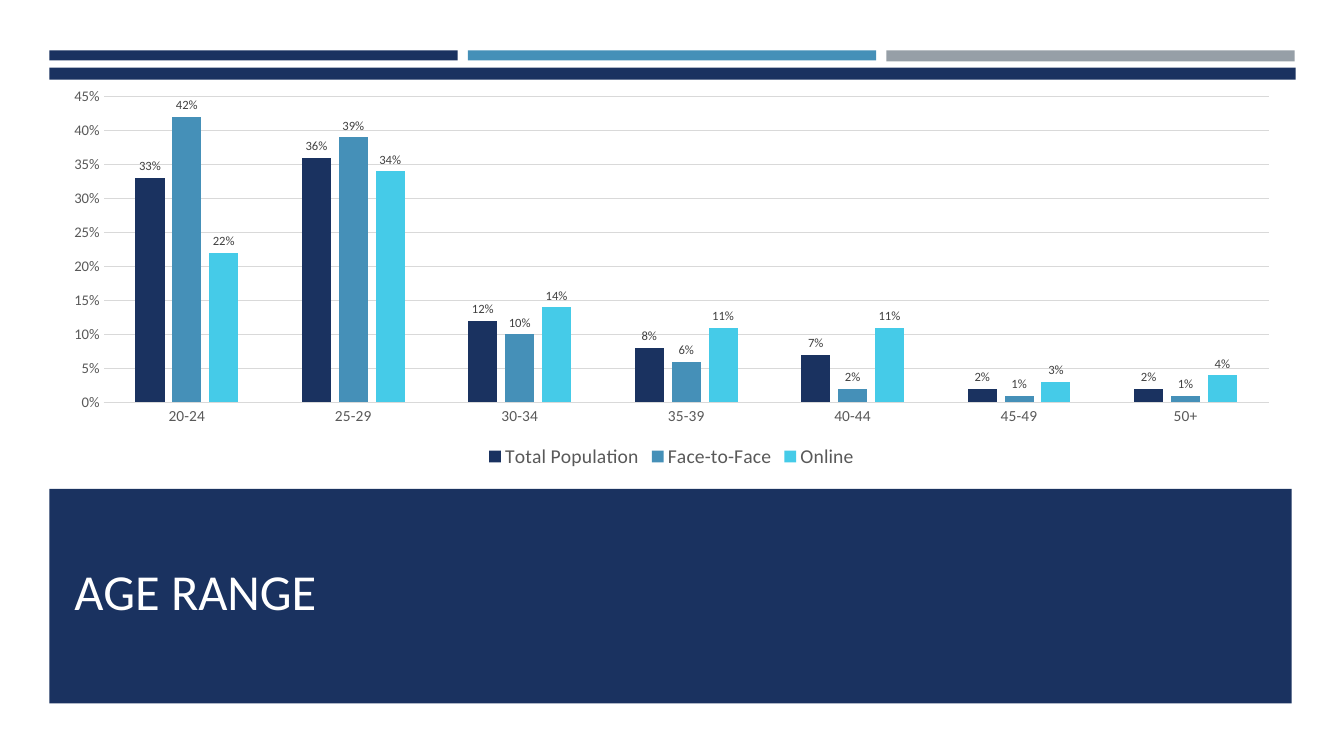
from pptx import Presentation
from pptx.chart.data import CategoryChartData
from pptx.dml.color import RGBColor
from pptx.enum.chart import XL_CHART_TYPE, XL_LABEL_POSITION, XL_LEGEND_POSITION, XL_TICK_MARK
from pptx.enum.shapes import MSO_SHAPE
from pptx.enum.text import MSO_ANCHOR
from pptx.util import Inches, Pt

NAVY = RGBColor(0x1A, 0x32, 0x60)
BLUE = RGBColor(0x45, 0x90, 0xB8)
CYAN = RGBColor(0x45, 0xCB, 0xE8)
SILVER = RGBColor(0x96, 0x9F, 0xA7)
WHITE = RGBColor(0xFF, 0xFF, 0xFF)
BLACK = RGBColor(0, 0, 0)
DARK = RGBColor(0x40, 0x40, 0x40)
GRAY = RGBColor(0x59, 0x59, 0x59)
PALE = RGBColor(0xD9, 0xD9, 0xD9)
FONT = "Calibri"
RECT = MSO_SHAPE.RECTANGLE
COLUMNS = XL_CHART_TYPE.COLUMN_CLUSTERED
BOTTOM = XL_LEGEND_POSITION.BOTTOM
OUTSIDE = XL_LABEL_POSITION.OUTSIDE_END
NO_TICK = XL_TICK_MARK.NONE

TITLE = "AGE RANGE"
AGES = ["20-24", "25-29", "30-34", "35-39", "40-44", "45-49", "50+"]
SERIES = [
    ("Total Population", NAVY, [0.33, 0.36, 0.12, 0.08, 0.07, 0.02, 0.02]),
    ("Face-to-Face", BLUE, [0.42, 0.39, 0.10, 0.06, 0.02, 0.01, 0.01]),
    ("Online", CYAN, [0.22, 0.34, 0.14, 0.11, 0.11, 0.03, 0.04]),
]
STRIPS = [(NAVY, 0.10), (BLUE, 0.10), (SILVER, 0.11)]
LEFT, STRIP, STEP = 0.49, 4.05, 4.15


def style(font, size, color):
    font.name = FONT
    font.size = Pt(size)
    font.color.rgb = color


def add_bar(slide, left, top, width, height, color):
    bar = slide.shapes.add_shape(
        RECT, Inches(left), Inches(top), Inches(width), Inches(height))
    bar.shadow.inherit = False
    bar.fill.solid()
    bar.fill.fore_color.rgb = color
    bar.line.fill.background()


def add_title(slide):
    box = slide.shapes.add_textbox(
        Inches(0.64), Inches(5.04), Inches(12.02), Inches(1.17))
    frame = box.text_frame
    frame.word_wrap = True
    frame.vertical_anchor = MSO_ANCHOR.BOTTOM
    run = frame.paragraphs[0].add_run()
    run.text = TITLE
    style(run.font, 36, WHITE)


def add_chart(slide):
    data = CategoryChartData(number_format="0%")
    data.categories = AGES
    for name, _, values in SERIES:
        data.add_series(name, values)
    chart = slide.shapes.add_chart(
        COLUMNS, Inches(LEFT), Inches(0.79), Inches(12.34), Inches(3.9), data).chart
    style(chart.font, 10, BLACK)
    chart.has_title = False
    chart.has_legend = True
    chart.legend.position = BOTTOM
    chart.legend.include_in_layout = False
    style(chart.legend.font, 14, GRAY)

    plot = chart.plots[0]
    plot.gap_width = 219
    plot.overlap = -27
    plot.vary_by_categories = False
    for series, (_, color, _) in zip(plot.series, SERIES):
        series.format.fill.solid()
        series.format.fill.fore_color.rgb = color
        series.invert_if_negative = False
        labels = series.data_labels
        labels.show_value = True
        labels.position = OUTSIDE
        labels.number_format = "0%"
        labels.number_format_is_linked = False
        style(labels.font, 9, DARK)

    ages, shares = chart.category_axis, chart.value_axis
    for axis, size in ((ages, 11), (shares, 10.5)):
        axis.major_tick_mark = axis.minor_tick_mark = NO_TICK
        style(axis.tick_labels.font, size, GRAY)
    shares.minimum_scale, shares.maximum_scale = 0, 0.45
    shares.major_unit = 0.05
    shares.tick_labels.number_format = "0%"
    shares.tick_labels.number_format_is_linked = False
    shares.format.line.fill.background()
    shares.has_major_gridlines = True
    for line in (ages.format.line, shares.major_gridlines.format.line):
        line.color.rgb = PALE
        line.width = Pt(0.75)


def main():
    deck = Presentation()
    deck.slide_width, deck.slide_height = Inches(13.33), Inches(7.5)
    slide = deck.slides.add_slide(deck.slide_layouts[6])
    for i, (color, height) in enumerate(STRIPS):
        add_bar(slide, LEFT + i * STEP, 0.5, STRIP, height, color)
    add_bar(slide, LEFT, 0.67, 12.36, 0.12, NAVY)
    add_bar(slide, LEFT, 4.85, 12.32, 2.13, NAVY)
    add_title(slide)
    add_chart(slide)
    deck.save("out.pptx")


if __name__ == "__main__":
    main()
